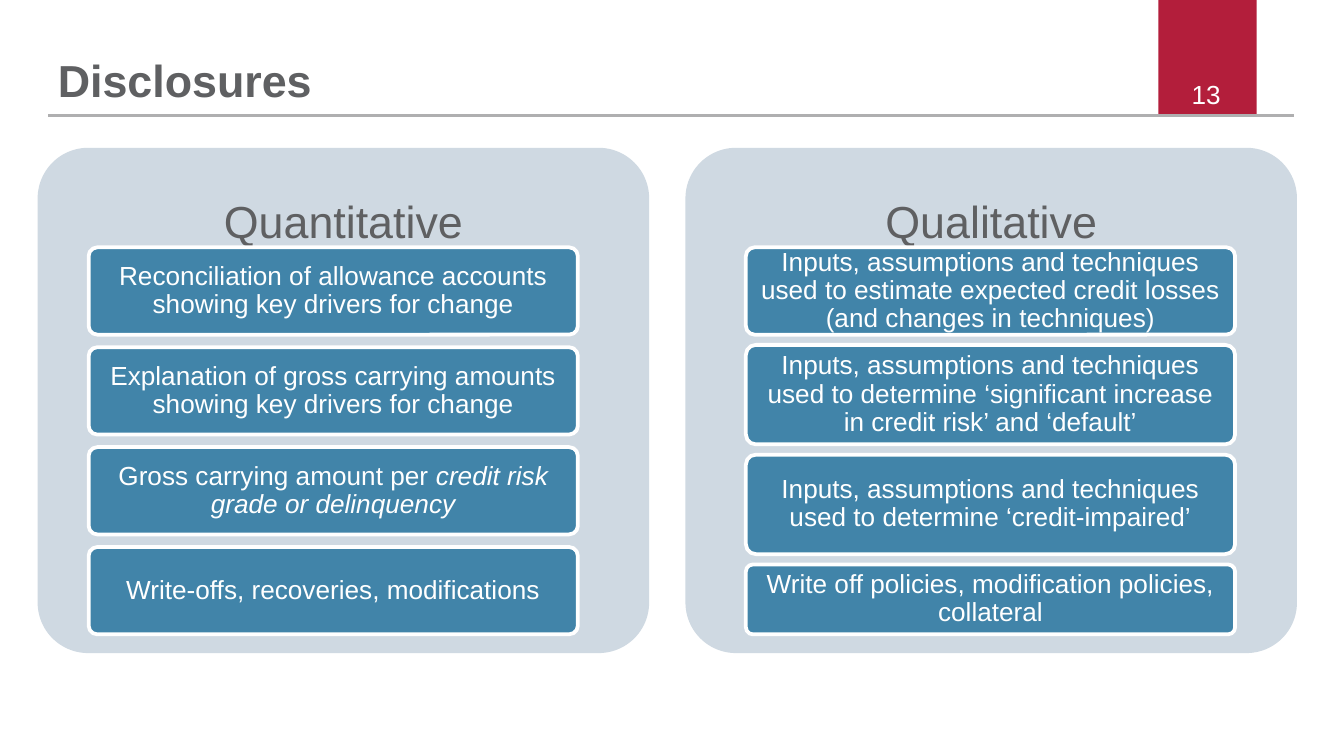
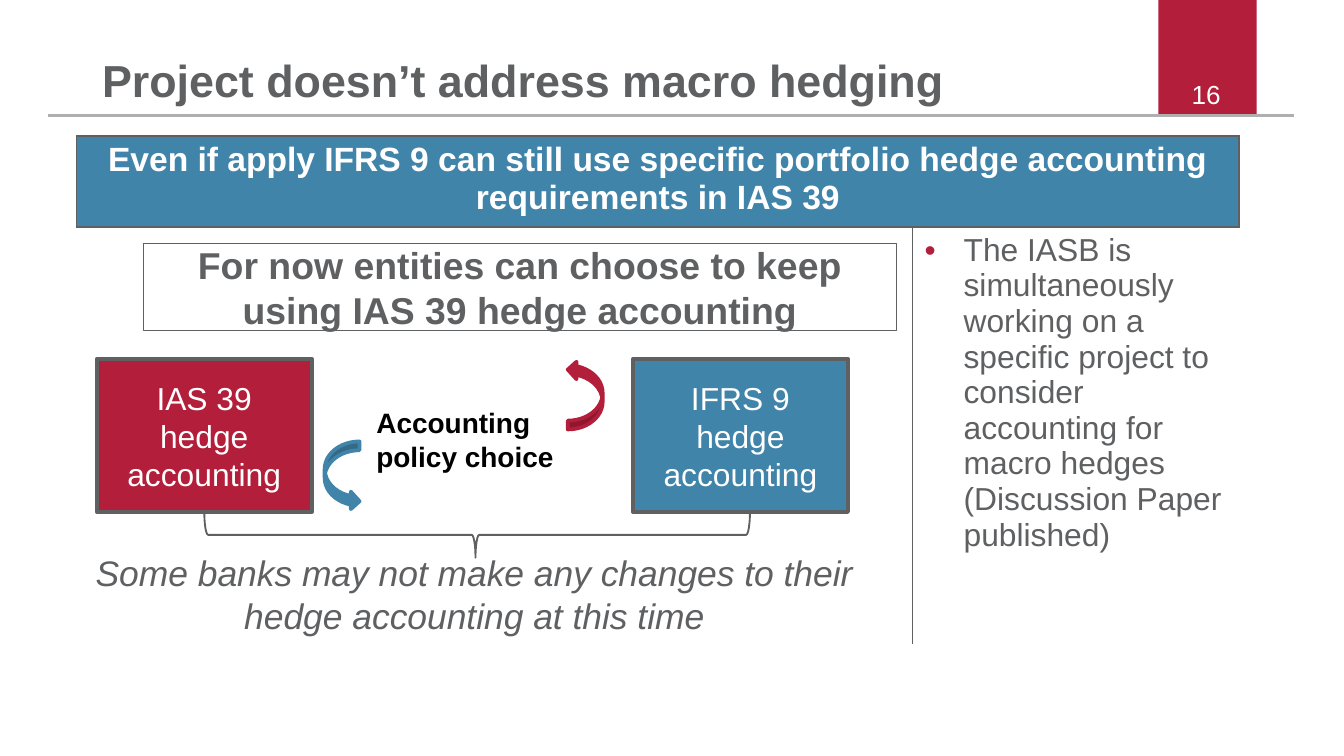
from collections import namedtuple

from lxml import etree
from pptx import Presentation
from pptx import util as u
from pptx.dml import color
from pptx.enum import shapes, text
from pptx.oxml import ns

Box = namedtuple("Box", "left top width height")
Kind = shapes.MSO_SHAPE
Align = text.PP_ALIGN
Anchor = text.MSO_ANCHOR


class Theme:
    font = "Arial"
    red, blue, pale = "B31E3B", "4184A9", "CFD9E2"
    grey, rule, white, black = "5F6062", "AFAFB0", "FFFFFF", "000000"
    heading, lead, remark, banner = 24, 20, 19, 18
    body, label, small = 17, 15, 14
    tight = 0.9
    thick, medium, thin, hair = 2, 1.2, 1, 0.75
    insets = (0.09, 0.04)
    row_insets = (0.04, 0.03)


# ---------- shared helpers ----------

def rgb(value):
    return color.RGBColor.from_string(value)


def apply(target, values):
    for name, value in values.items():
        setattr(target, name, value)


def inches(box):
    return [u.Inches(value) for value in box]


def inside(box, left, top, width, height):
    """Place a part relative to the corner of a box."""
    return Box(box.left + left, box.top + top, width, height)


def write(frame, spans, size, ink, align=Align.LEFT, spacing=1.0, bold=False):
    """Fill the first paragraph; spans are a string or (string, italic) pairs."""
    para = frame.paragraphs[0]
    apply(para, {"alignment": align, "line_spacing": spacing})
    if isinstance(spans, str):
        spans = [(spans, False)]
    for words, italic in spans:
        span = para.add_run()
        span.text = words
        apply(span.font, {"name": Theme.font, "size": u.Pt(size),
                          "bold": bold, "italic": italic})
        span.font.color.rgb = rgb(ink)


def set_frame(frame, insets, anchor):
    across, down = inches(insets)
    apply(frame, {"word_wrap": True, "vertical_anchor": anchor,
                  "margin_left": across, "margin_right": across,
                  "margin_top": down, "margin_bottom": down})


def add_text(page, box, spans, insets=Theme.insets, anchor=Anchor.TOP, **style):
    frame = page.shapes.add_textbox(*inches(box)).text_frame
    set_frame(frame, insets, anchor)
    write(frame, spans, **style)


def add_block(page, kind, box, fill=None, line=None, weight=Theme.thick,
              adjust=(), turn=0):
    block = page.shapes.add_shape(kind, *inches(box))
    block.shadow.inherit = False
    block.rotation = turn
    for index, value in enumerate(adjust):
        block.adjustments[index] = value
    if fill:
        block.fill.solid()
        block.fill.fore_color.rgb = rgb(fill)
    else:
        block.fill.background()
    if line:
        block.line.color.rgb = rgb(line)
        block.line.width = u.Pt(weight)
    else:
        block.line.fill.background()
    return block


def add_label_block(page, kind, box, spans, look, style, insets=Theme.insets):
    frame = add_block(page, kind, box, **look).text_frame
    set_frame(frame, insets, Anchor.MIDDLE)
    write(frame, spans, align=Align.CENTER, **style)


def set_borders(cell, sides):
    """Draw the named sides of a cell and clear the others."""
    properties = cell._tc.get_or_add_tcPr()
    for index, side in enumerate("LRTB"):
        edge = etree.Element(ns.qn(f"a:ln{side}"), w=str(u.Pt(Theme.thin)))
        if side in sides:
            paint = etree.SubElement(edge, ns.qn("a:solidFill"))
            etree.SubElement(paint, ns.qn("a:srgbClr"), val=Theme.grey)
        else:
            etree.SubElement(edge, ns.qn("a:noFill"))
        properties.insert(index, edge)


def add_bullet(para, indent):
    properties = para._p.get_or_add_pPr()
    properties.set("marL", str(u.Inches(indent)))
    properties.set("indent", str(-u.Inches(indent)))
    paint = etree.SubElement(properties, ns.qn("a:buClr"))
    etree.SubElement(paint, ns.qn("a:srgbClr"), val=Theme.red)
    etree.SubElement(properties, ns.qn("a:buFont"), typeface=Theme.font)
    etree.SubElement(properties, ns.qn("a:buChar"), char="•")


# ---------- header of every slide ----------

def add_header(page, box, title, number, title_left):
    tab = inside(box, 8.62, 0, 0.73, box.height)
    add_block(page, Kind.RECTANGLE, tab, fill=Theme.red)

    # Rule under the title
    base = box.top + box.height
    rule = page.shapes.add_connector(
        shapes.MSO_CONNECTOR.STRAIGHT,
        *inches((box.left + 0.36, base, box.left + 9.63, base)))
    rule.line.color.rgb = rgb(Theme.rule)
    rule.line.width = u.Pt(Theme.medium)
    etree.SubElement(rule._element.spPr, ns.qn("a:effectLst"))

    # Title and page number
    add_text(page, inside(box, title_left, 0.15, 7.41, 0.65), title, (0, 0),
             Anchor.BOTTOM, size=Theme.heading, ink=Theme.grey,
             spacing=Theme.tight, bold=True)
    add_text(page, inside(tab, 0.01, 0.58, 0.69, 0.16), number, (0, 0),
             size=Theme.small, ink=Theme.white, align=Align.CENTER)


# ---------- slide: disclosures ----------

def add_panel(page, box, heading, rows, row_left):
    """A rounded panel; rows are (height, spans) spread with equal gaps."""
    add_block(page, Kind.ROUNDED_RECTANGLE, box, fill=Theme.pale, adjust=[0.1])
    add_text(page, box._replace(height=1.13), heading, (0.1, 0.1),
             Anchor.MIDDLE, size=Theme.heading, ink=Theme.grey,
             align=Align.CENTER, spacing=Theme.tight)

    top, stack = 0.74, 2.88
    gap = (stack - sum(height for height, _ in rows)) / (len(rows) - 1)
    look = {"fill": Theme.blue, "line": Theme.white, "adjust": [0.1]}
    style = {"size": Theme.small, "ink": Theme.white, "spacing": Theme.tight}
    for height, spans in rows:
        add_label_block(page, Kind.ROUNDED_RECTANGLE,
                        inside(box, row_left, top, 3.64, height),
                        spans, look, style, Theme.row_insets)
        top += height + gap


def build_disclosures(page, box):
    quantitative = [
        (0.65, "Reconciliation of allowance accounts showing key drivers for change"),
        (0.65, "Explanation of gross carrying amounts showing key drivers for change"),
        (0.65, [("Gross carrying amount per ", False),
                ("credit risk grade or delinquency", True)]),
        (0.65, "Write-offs, recoveries, modifications"),
    ]
    opening = "Inputs, assumptions and techniques used to "
    qualitative = [
        (0.65, opening + "estimate expected credit losses (and changes in techniques)"),
        (0.74, opening + "determine ‘significant increase in credit risk’ and ‘default’"),
        (0.74, opening + "determine ‘credit-impaired’"),
        (0.52, "Write off policies, modification policies, collateral"),
    ]
    panel = box._replace(width=4.55)
    add_panel(page, panel, "Quantitative", quantitative, 0.38)
    add_panel(page, panel._replace(left=box.left + box.width - panel.width),
              "Qualitative", qualitative, 0.45)


# ---------- slide: macro hedging ----------

def add_hedging_table(page, box):
    widths, heights = (6.22, 2.43), (0.68, 3.1)
    table = page.shapes.add_table(2, 2, *inches(box)).table
    apply(table, {"first_row": False, "horz_banding": False})
    for column, width in zip(table.columns, widths):
        column.width = u.Inches(width)
    for row, height in zip(table.rows, heights):
        row.height = u.Inches(height)

    across, down = inches(Theme.insets)
    for cell, sides in zip(table.iter_cells(), ("LRTB", "LRTB", "RT", "LT")):
        apply(cell, {"margin_left": across, "margin_right": across,
                     "margin_top": down, "margin_bottom": down})
        cell.fill.background()
        set_borders(cell, sides)

    # Banner across both columns
    banner = table.cell(0, 0)
    banner.merge(table.cell(0, 1))
    banner.fill.solid()
    banner.fill.fore_color.rgb = rgb(Theme.blue)
    write(banner.text_frame,
          "Even if apply IFRS 9 can still use specific portfolio hedge "
          "accounting requirements in IAS 39",
          Theme.banner, Theme.white, Align.CENTER, bold=True)

    # Side note
    note = table.cell(1, 1).text_frame
    add_bullet(note.paragraphs[0], 0.29)
    write(note, "The IASB is simultaneously working on a specific project to "
          "consider accounting for macro hedges (Discussion Paper published)",
          Theme.body, Theme.grey)


def add_policy_choice(page, box):
    # The two standards
    for left, name, fill in ((3.99, "IFRS 9", Theme.blue),
                             (0, "IAS 39", Theme.red)):
        add_label_block(page, Kind.RECTANGLE,
                        inside(box, left, 0, 1.6, box.height),
                        f"{name} hedge accounting",
                        {"fill": fill, "line": Theme.grey},
                        {"size": Theme.body, "ink": Theme.white})

    # Arrows between them
    for left, top, turn, fill in ((3.38, 0.14, 270, Theme.red),
                                  (1.57, 0.74, 90, Theme.blue)):
        add_block(page, Kind.CURVED_UP_ARROW, inside(box, left, top, 0.51, 0.26),
                  fill=fill, line=fill, turn=turn)
    add_text(page, inside(box, 1.99, 0.31, 1.65, 0.59),
             "Accounting policy choice", size=Theme.label, ink=Theme.black,
             bold=True)

    # Statement above, remark and brace below
    add_label_block(page, Kind.RECTANGLE, inside(box, 0.35, -0.86, 5.6, 0.65),
                    "For now entities can choose to keep using IAS 39 hedge accounting",
                    {"fill": Theme.white, "line": Theme.grey, "weight": Theme.hair},
                    {"size": Theme.lead, "ink": Theme.grey, "bold": True})
    add_label_block(page, Kind.RECTANGLE, inside(box, -0.17, 1.28, 5.96, 0.94),
                    [("Some banks may not make any changes to their hedge "
                      "accounting at this time", True)],
                    {"fill": Theme.white},
                    {"size": Theme.remark, "ink": Theme.grey})
    add_block(page, Kind.RIGHT_BRACE, inside(box, 2.66, -0.72, 0.34, 4.06),
              line=Theme.grey, weight=Theme.thin, adjust=[0.083, 0.503], turn=90)


def build_macro_hedging(page, box):
    add_hedging_table(page, box)
    add_policy_choice(page, inside(box, 0.15, 1.66, 5.59, 1.14))


# ---------- deck ----------

def main():
    deck = Presentation()
    # Widescreen, 16 to 9
    width = u.Inches(10)
    apply(deck, {"slide_width": width, "slide_height": width * 9 // 16})
    header = Box(0, 0, 10, 0.86)
    pages = [
        ("Disclosures", "13", 0.43,
         build_disclosures, Box(0.28, 1.1, 9.37, 3.76)),
        ("Project doesn’t address macro hedging", "16", 0.76,
         build_macro_hedging, Box(0.57, 1.01, 8.65, 3.78)),
    ]
    for title, number, title_left, build, body in pages:
        page = deck.slides.add_slide(deck.slide_layouts[6])
        add_header(page, header, title, number, title_left)
        build(page, body)
    deck.save("out.pptx")


if __name__ == "__main__":
    main()
